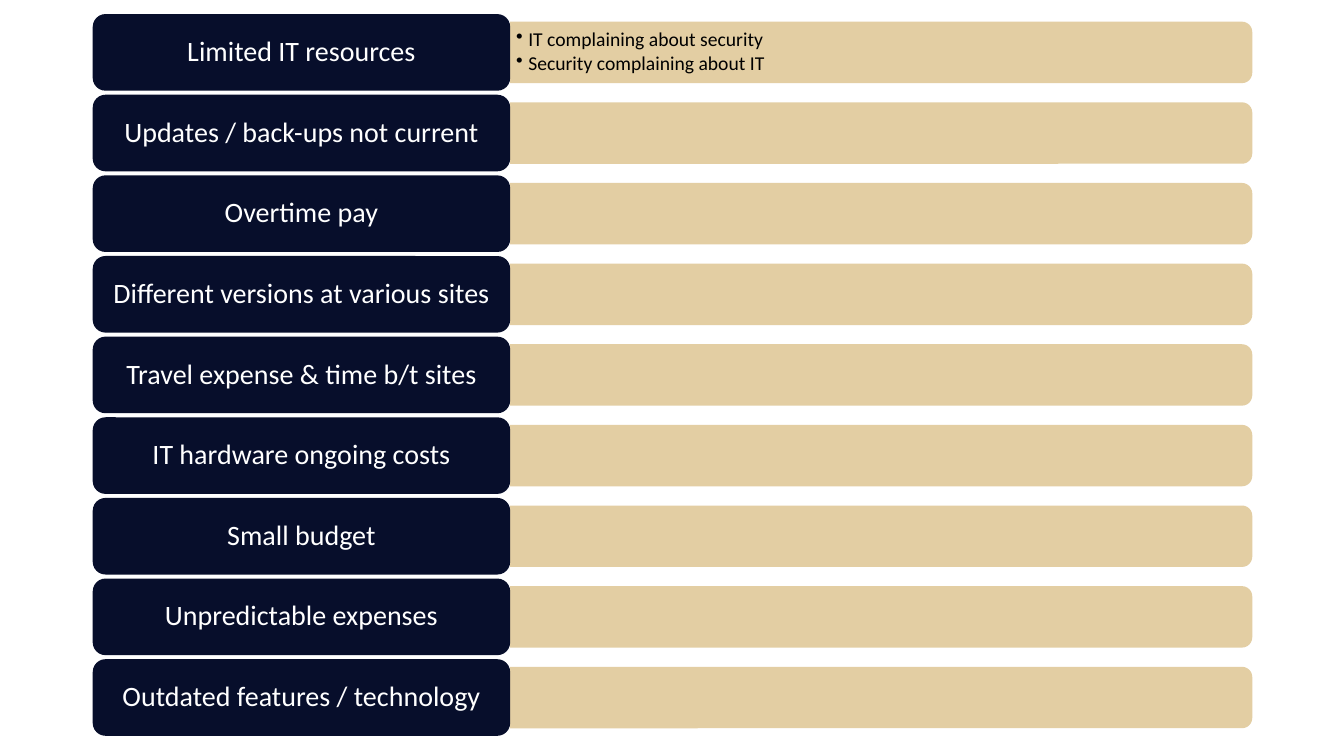
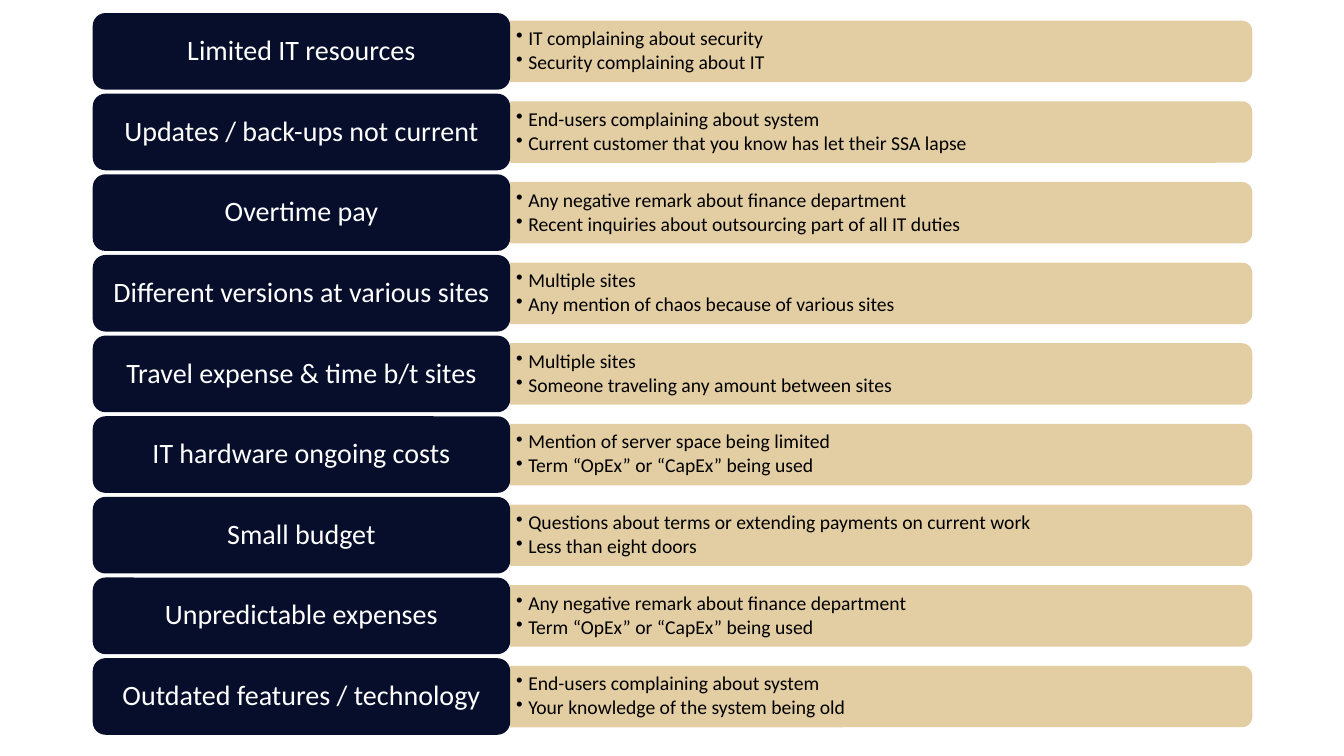
from dataclasses import dataclass

from lxml import etree
from pptx import Presentation
from pptx.dml.color import RGBColor
from pptx.enum.shapes import MSO_SHAPE
from pptx.enum.text import MSO_ANCHOR, PP_ALIGN
from pptx.oxml.ns import qn
from pptx.util import Inches, Pt

ROUND = MSO_SHAPE.ROUNDED_RECTANGLE
TAB = MSO_SHAPE.ROUND_2_SAME_RECTANGLE
MIDDLE = MSO_ANCHOR.MIDDLE
CENTER = PP_ALIGN.CENTER


@dataclass(frozen=True)
class Theme:
    font: str = "Calibri"
    navy: RGBColor = RGBColor(0x07, 0x0E, 0x2B)
    sand: RGBColor = RGBColor(0xE3, 0xCE, 0xA3)
    white: RGBColor = RGBColor(0xFF, 0xFF, 0xFF)
    black: RGBColor = RGBColor(0x00, 0x00, 0x00)
    label: int = 20
    note: int = 14
    lines: float = 0.9


THEME = Theme()

# Row grid, in inches
LEFT = 0.92
PITCH = 0.8
LABEL_W, LABEL_H = 4.14, 0.76
BAR_X, BAR_W, BAR_H = LEFT + LABEL_W, 7.36, 0.61
NOTE_W, NOTE_H = 7.33, 0.55
INDENT = 0.12

# Each pain point with the signs that reveal it
ROWS = [
    ("Limited IT resources",
     ["IT complaining about security", "Security complaining about IT"]),
    ("Updates / back-ups not current",
     ["End-users complaining about system",
      "Current customer that you know has let their SSA lapse"]),
    ("Overtime pay",
     ["Any negative remark about finance department",
      "Recent inquiries about outsourcing part of all IT duties"]),
    ("Different versions at various sites",
     ["Multiple sites", "Any mention of chaos because of various sites"]),
    ("Travel expense & time b/t sites",
     ["Multiple sites", "Someone traveling any amount between sites"]),
    ("IT hardware ongoing costs",
     ["Mention of server space being limited",
      "Term “OpEx” or “CapEx” being used"]),
    ("Small budget",
     ["Questions about terms or extending payments on current work",
      "Less than eight doors"]),
    ("Unpredictable expenses",
     ["Any negative remark about finance department",
      "Term “OpEx” or “CapEx” being used"]),
    ("Outdated features / technology",
     ["End-users complaining about system",
      "Your knowledge of the system being old"]),
]


def add_block(slide, kind, x, y, w, h, fill):
    block = slide.shapes.add_shape(kind, Inches(x), Inches(y), Inches(w), Inches(h))
    block.shadow.inherit = False
    block.fill.solid()
    block.fill.fore_color.rgb = fill
    block.line.fill.background()
    return block


def set_frame(frame, side, edge):
    frame.word_wrap = True
    frame.vertical_anchor = MIDDLE
    frame.margin_left = frame.margin_right = Inches(side)
    frame.margin_top = frame.margin_bottom = Inches(edge)


def style_text(para, size, color):
    para.line_spacing = THEME.lines
    para.font.name = THEME.font
    para.font.size = Pt(size)
    para.font.color.rgb = color


def add_bullet(para):
    props = para._p.get_or_add_pPr()
    props.set("marL", str(Inches(INDENT)))
    props.set("indent", str(-Inches(INDENT)))
    etree.SubElement(props, qn("a:buChar")).set("char", "•")


def add_bar(slide, mid):
    # A quarter turn puts the rounded corners on the right
    bar = add_block(slide, TAB, BAR_X + (BAR_W - BAR_H) / 2, mid - BAR_W / 2,
                    BAR_H, BAR_W, THEME.sand)
    bar.rotation = 90


def add_notes(slide, mid, notes):
    box = slide.shapes.add_textbox(Inches(BAR_X), Inches(mid - NOTE_H / 2),
                                   Inches(NOTE_W), Inches(NOTE_H))
    frame = box.text_frame
    set_frame(frame, 0.06, 0.03)
    frame.text = "\n".join(notes)
    for i, para in enumerate(frame.paragraphs):
        add_bullet(para)
        style_text(para, THEME.note, THEME.black)
        if i:
            para.space_before = Pt(2)


def add_label(slide, mid, text):
    label = add_block(slide, ROUND, LEFT, mid - LABEL_H / 2,
                      LABEL_W, LABEL_H, THEME.navy)
    frame = label.text_frame
    set_frame(frame, 0.08, 0.04)
    frame.text = text
    para = frame.paragraphs[0]
    para.alignment = CENTER
    style_text(para, THEME.label, THEME.white)


def add_rows(deck, top, shown):
    """Add a slide of all labels, with notes on the first `shown` rows."""
    slide = deck.slides.add_slide(deck.slide_layouts[6])
    for i, (text, notes) in enumerate(ROWS):
        mid = top + i * PITCH + LABEL_H / 2
        add_bar(slide, mid)
        if i < shown:
            add_notes(slide, mid, notes)
        add_label(slide, mid, text)


def main():
    deck = Presentation()
    deck.slide_width, deck.slide_height = Inches(13.33), Inches(7.5)
    add_rows(deck, 0.14, 1)
    add_rows(deck, 0.13, len(ROWS))
    deck.save("out.pptx")


if __name__ == "__main__":
    main()
